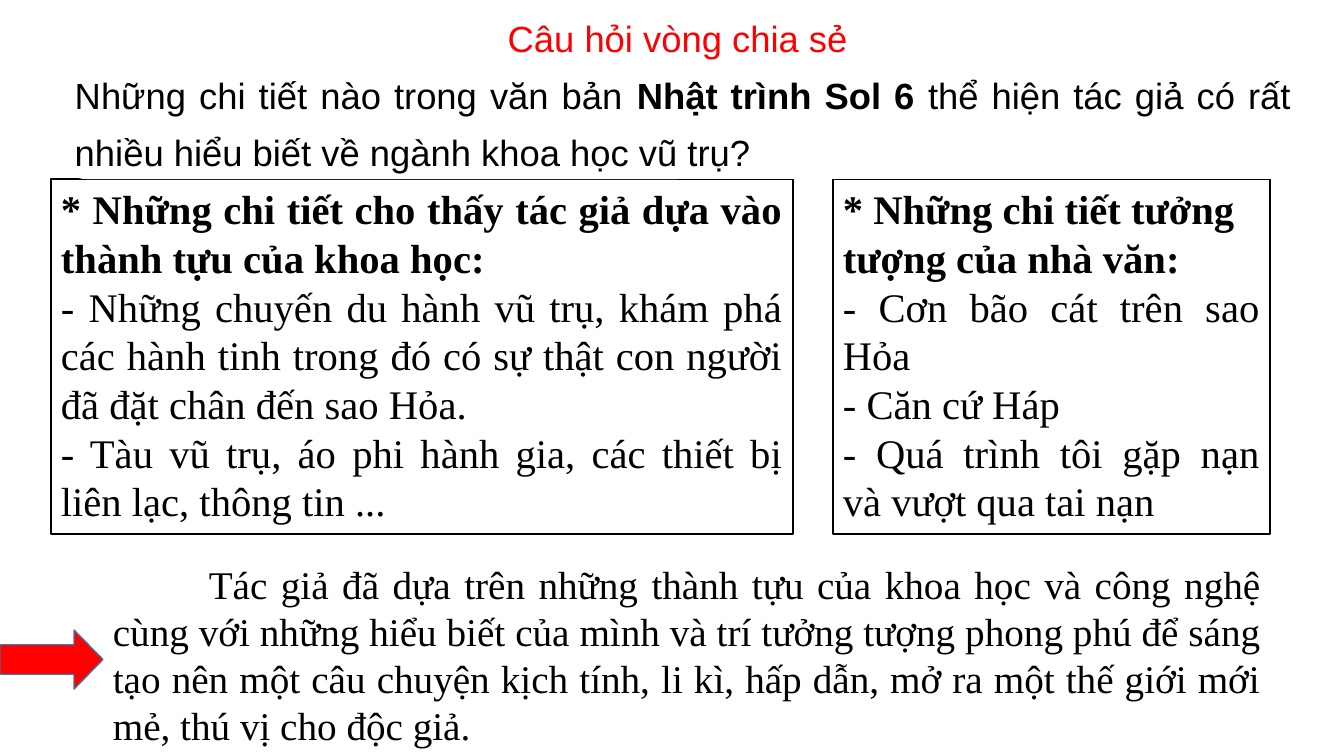
from pptx import Presentation
from pptx.dml.color import RGBColor
from pptx.enum.shapes import MSO_SHAPE as SHAPE
from pptx.enum.text import MSO_ANCHOR as ANCHOR, MSO_AUTO_SIZE as FIT, PP_ALIGN as ALIGN
from pptx.util import Emu, Pt

BLACK = RGBColor(0x00, 0x00, 0x00)
WHITE = RGBColor(0xFF, 0xFF, 0xFF)
RED = RGBColor(0xFF, 0x00, 0x00)
STEEL = RGBColor(0x43, 0x73, 0x9E)
SERIF, SANS = "Times New Roman", "Arial"


def px(n):
    return Emu(round(n * 914400 / 100.8))


class Deck:
    def __init__(self, width, height):
        self.prs = Presentation()
        self.prs.slide_width, self.prs.slide_height = px(width), px(height)
        self.s = self.prs.slides.add_slide(self.prs.slide_layouts[6])

    def shape(self, kind, box, fill, line=None):
        sp = self.s.shapes.add_shape(kind, *map(px, box))
        sp.shadow.inherit = False
        sp.fill.solid()
        sp.fill.fore_color.rgb = fill
        if line is None:
            sp.line.fill.background()
        else:
            sp.line.color.rgb = line
            sp.line.width = Pt(1)
        return sp

    def textbox(self, box):
        return self.s.shapes.add_textbox(*map(px, box))

    def frame(self, sp, anchor=ANCHOR.TOP, fit=FIT.SHAPE_TO_FIT_TEXT):
        tf = sp.text_frame
        for name, value in dict(word_wrap=True, vertical_anchor=anchor, auto_size=fit).items():
            setattr(tf, name, value)
        return tf

    def paragraph(self, tf, runs, size, font, align=ALIGN.JUSTIFY, color=BLACK, spacing=None):
        """Fill the first empty paragraph or add one; runs are (text, bold) pairs."""
        p = tf.paragraphs[-1]
        if p.runs:
            p = tf.add_paragraph()
        p.alignment = align
        if spacing:
            p.line_spacing = spacing
        for text, bold in runs:
            r = p.add_run()
            r.text = text
            for name, value in dict(name=font, size=Pt(size), bold=bold).items():
                setattr(r.font, name, value)
            r.font.color.rgb = color
        return p

    def card(self, box, heading, items, heading_align):
        tf = self.frame(self.shape(SHAPE.RECTANGLE, box, WHITE, BLACK))
        self.paragraph(tf, [(heading, True)], 29, SERIF, heading_align)
        for item in items:
            self.paragraph(tf, [(item, False)], 29, SERIF)


def main():
    deck = Deck(1344, 756)

    # Two answer cards
    deck.card((51, 179, 742, 355),
              "* Những chi tiết cho thấy tác giả dựa vào thành tựu của khoa học:",
              ["- Những chuyến du hành vũ trụ, khám phá các hành tinh trong đó có "
               "sự thật con người đã đặt chân đến sao Hỏa.",
               "- Tàu vũ trụ, áo phi hành gia, các thiết bị liên lạc, thông tin ..."],
              ALIGN.JUSTIFY)
    deck.card((833, 179, 437, 355),
              "* Những chi tiết tưởng tượng của nhà văn:",
              ["- Cơn bão cát trên sao Hỏa",
               "- Căn cứ Háp",
               "- Quá trình tôi gặp nạn và vượt qua tai nạn"],
              ALIGN.LEFT)

    # Arrow and conclusion
    arrow = deck.shape(SHAPE.RIGHT_ARROW, (0, 630, 103, 59), RED, STEEL)
    arrow.adjustments[1] = 0.49
    tf = deck.frame(deck.textbox((103, 555, 1168, 201)))
    p = deck.paragraph(tf, [(
        "Tác giả đã dựa trên những thành tựu của khoa học và công nghệ cùng với "
        "những hiểu biết của mình và trí tưởng tượng phong phú để sáng tạo nên một "
        "câu chuyện kịch tính, li kì, hấp dẫn, mở ra một thế giới mới mẻ, "
        "thú vị cho độc giả.", False)], 28, SERIF)
    p._p.get_or_add_pPr().set("indent", str(px(96)))

    # Question banner
    banner = deck.shape(SHAPE.ROUNDED_RECTANGLE, (56, -2, 1254, 181), WHITE)
    tf = deck.frame(banner, ANCHOR.MIDDLE, FIT.NONE)
    deck.paragraph(tf, [("Câu hỏi vòng chia sẻ ", False)], 26, SANS, ALIGN.CENTER, RED, 1.3)
    deck.paragraph(tf, [("Những chi tiết nào trong văn bản ", False),
                        ("Nhật trình Sol 6 ", True),
                        ("thể hiện tác giả có rất nhiều hiểu biết về ngành khoa học vũ trụ?",
                         False)], 26, SANS, spacing=1.3)

    deck.prs.save("out.pptx")


if __name__ == "__main__":
    main()
